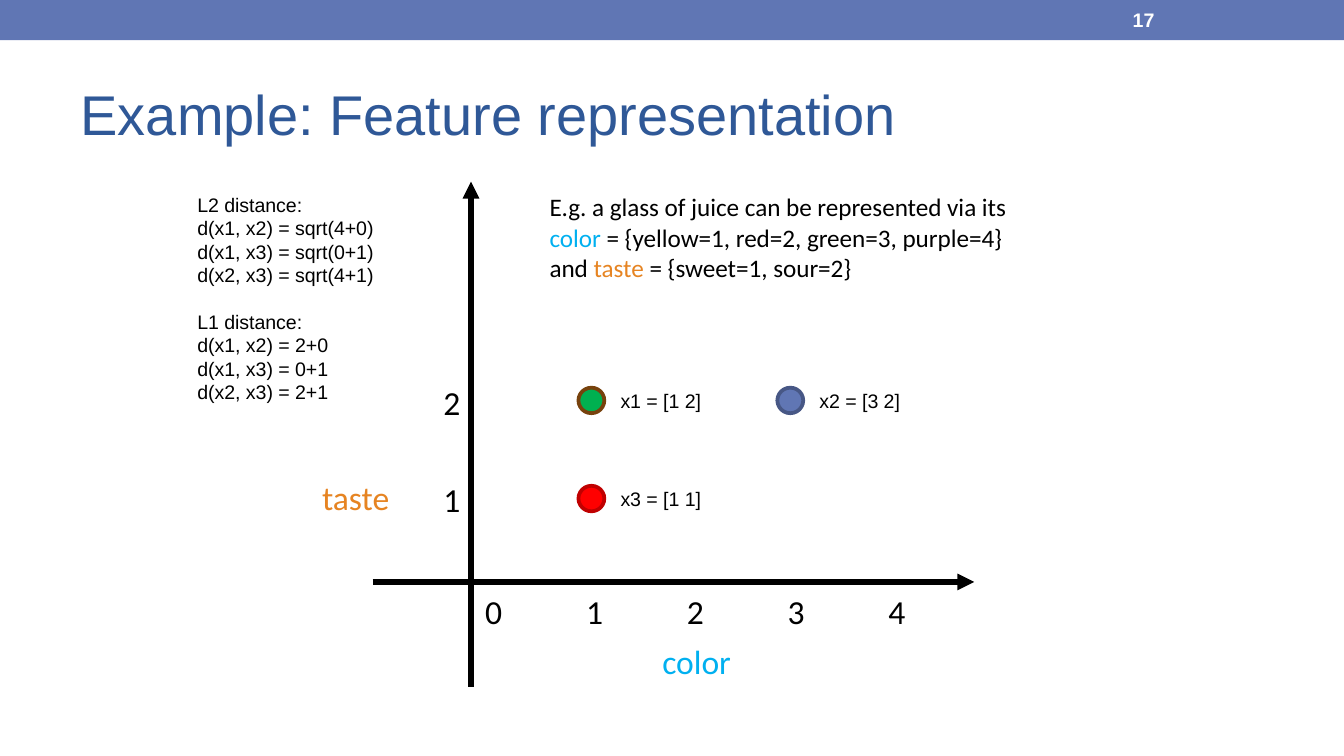
from dataclasses import dataclass

from lxml import etree
from pptx import Presentation, util as u
from pptx.dml.color import RGBColor
from pptx.enum import shapes, text
from pptx.oxml.ns import qn

BLACK = RGBColor(0x00, 0x00, 0x00)
WHITE = RGBColor(0xFF, 0xFF, 0xFF)
SLATE = RGBColor(0x60, 0x76, 0xB4)
SLATE_EDGE = RGBColor(0x47, 0x57, 0x85)
TITLE_BLUE = RGBColor(0x2F, 0x58, 0x97)
COLOR_BLUE = RGBColor(0x00, 0xB0, 0xF0)
TASTE_ORANGE = RGBColor(0xE6, 0x84, 0x22)
GREEN = RGBColor(0x00, 0xB0, 0x50)
BROWN = RGBColor(0x77, 0x42, 0x0D)
RED = RGBColor(0xFF, 0x00, 0x00)
DARK_RED = RGBColor(0xC0, 0x00, 0x00)

WIDTH = 10
HEIGHT = WIDTH * 9 / 16


@dataclass
class Grid:
    """A grid in inches; a negative row height counts rows upwards."""
    left: float
    top: float
    col: float
    row: float

    def point(self, x, y):
        return u.Inches(self.left + x * self.col), u.Inches(self.top + y * self.row)

    def box(self, x, y, w, h):
        return *self.point(x, y), u.Inches(w * self.col), u.Inches(h * abs(self.row))


PERCENT = Grid(0, 0, WIDTH / 100, HEIGHT / 100)
FEATURES = Grid(3.66, 4.44, 0.74, -0.73)  # one column per colour, one row per taste


def style(paragraph, size, font, color=BLACK, bold=False):
    paragraph.font.size = u.Pt(size)
    paragraph.font.name = font
    paragraph.font.bold = bold
    paragraph.font.color.rgb = color


def add_text(slide, box, lines, size, font, color=BLACK, bold=False, wrap=False):
    frame = slide.shapes.add_textbox(*box).text_frame
    frame.word_wrap = wrap
    frame.text = "\n".join(lines)
    for paragraph in frame.paragraphs:
        style(paragraph, size, font, color, bold)
    return frame


def add_filled(slide, kind, box, fill, edge=None):
    shape = slide.shapes.add_shape(kind, *box)
    shape.shadow.inherit = False
    shape.fill.solid()
    shape.fill.fore_color.rgb = fill
    if edge is None:
        shape.line.fill.background()
    else:
        shape.line.color.rgb = edge
        shape.line.width = u.Pt(2)


def add_axis(slide, start, end):
    axis = slide.shapes.add_connector(shapes.MSO_CONNECTOR.STRAIGHT, *start, *end)
    axis.line.color.rgb = BLACK
    axis.line.width = u.Pt(3)
    etree.SubElement(axis.line._get_or_add_ln(), qn("a:tailEnd"), type="triangle")
    etree.SubElement(axis._element.spPr, qn("a:effectLst"))


def add_header(slide, grid):
    add_filled(slide, shapes.MSO_SHAPE.RECTANGLE, grid.box(0, 0, 100, 5.3), SLATE)
    number = add_text(slide, grid.box(83.3, 0.2, 11.7, 4.8), ["17"], 10.5, "Arial",
                      WHITE, bold=True, wrap=True)
    number.vertical_anchor = text.MSO_ANCHOR.MIDDLE

    title = slide.shapes.title
    title.left, title.top, title.width, title.height = grid.box(5, 7.8, 90, 14.4)
    title.text = "Example: Feature representation"
    title.text_frame.vertical_anchor = text.MSO_ANCHOR.MIDDLE
    heading = title.text_frame.paragraphs[0]
    heading.alignment = text.PP_ALIGN.LEFT
    style(heading, 30, "Arial", TITLE_BLUE)


def add_distances(slide, box):
    lines = ["L2 distance:", "d(x1, x2) = sqrt(4+0)", "d(x1, x3) = sqrt(0+1)",
             "d(x2, x3) = sqrt(4+1)",
             "L1 distance:", "d(x1, x2) = 2+0", "d(x1, x3) = 0+1", "d(x2, x3) = 2+1"]
    frame = add_text(slide, box, lines, 10.5, "Arial")
    frame.paragraphs[lines.index("L1 distance:")].space_before = u.Pt(12.5)


def add_explanation(slide, box):
    frame = add_text(slide, box, [""], 13.5, "Calibri", wrap=True)
    sentence = frame.paragraphs[0]
    for words, color in [
        ("E.g. a glass of juice can be represented via its ", BLACK),
        ("color", COLOR_BLUE),
        (" = {yellow=1, red=2, green=3, purple=4} and ", BLACK),
        ("taste", TASTE_ORANGE),
        (" = {sweet=1, sour=2}", BLACK),
    ]:
        run = sentence.add_run()
        run.text = words
        run.font.color.rgb = color


def add_axes(slide, grid):
    add_axis(slide, grid.point(-1.2, 0.15), grid.point(4.85, 0.15))
    add_axis(slide, grid.point(-0.21, -0.92), grid.point(-0.21, 4.23))

    color_ticks = add_text(slide, grid.box(-0.2, 0.13, 4.54, 0.55),
                           ["\t".join("01234")], 18, "Calibri").paragraphs[0]
    stops = etree.Element(qn("a:tabLst"))
    for tick in range(1, 5):
        etree.SubElement(stops, qn("a:tab"), pos=str(u.Inches(0.75 * tick)), algn="l")
    color_ticks._p.get_or_add_pPr().insert(0, stops)

    taste_ticks = add_text(slide, grid.box(-0.62, 2.26, 0.45, 1.56), "21", 18, "Calibri")
    taste_ticks.paragraphs[1].space_before = u.Pt(30.5)

    add_text(slide, grid.box(1.58, -0.38, 0.97, 0.55), ["color"], 18, "Calibri", COLOR_BLUE)
    add_text(slide, grid.box(-1.84, 1.29, 0.96, 0.55), ["taste"], 18, "Calibri", TASTE_ORANGE)


def add_samples(slide, grid):
    dot = 0.26
    for name, color, taste, fill, edge in [
        ("x1", 1, 2, GREEN, BROWN),
        ("x2", 3, 2, SLATE, SLATE_EDGE),
        ("x3", 1, 1, RED, DARK_RED),
    ]:
        add_filled(slide, shapes.MSO_SHAPE.OVAL,
                   grid.box(color - dot / 2, taste + dot / 2, dot, dot), fill, edge)
        add_text(slide, grid.box(color + 0.16, taste + 0.19, 1.09, 0.38),
                 [f"{name} = [{color} {taste}]"], 10.5, "Arial")


def main():
    deck = Presentation()
    deck.slide_width, deck.slide_height = u.Inches(WIDTH), u.Inches(HEIGHT)
    slide = deck.slides.add_slide(deck.slide_layouts[5])
    add_header(slide, PERCENT)
    add_axes(slide, FEATURES)
    add_samples(slide, FEATURES)
    add_explanation(slide, PERCENT.box(39.9, 24.5, 37.5, 13.9))
    add_distances(slide, PERCENT.box(13.7, 24.6, 15.4, 33.3))
    deck.save("out.pptx")


if __name__ == "__main__":
    main()
